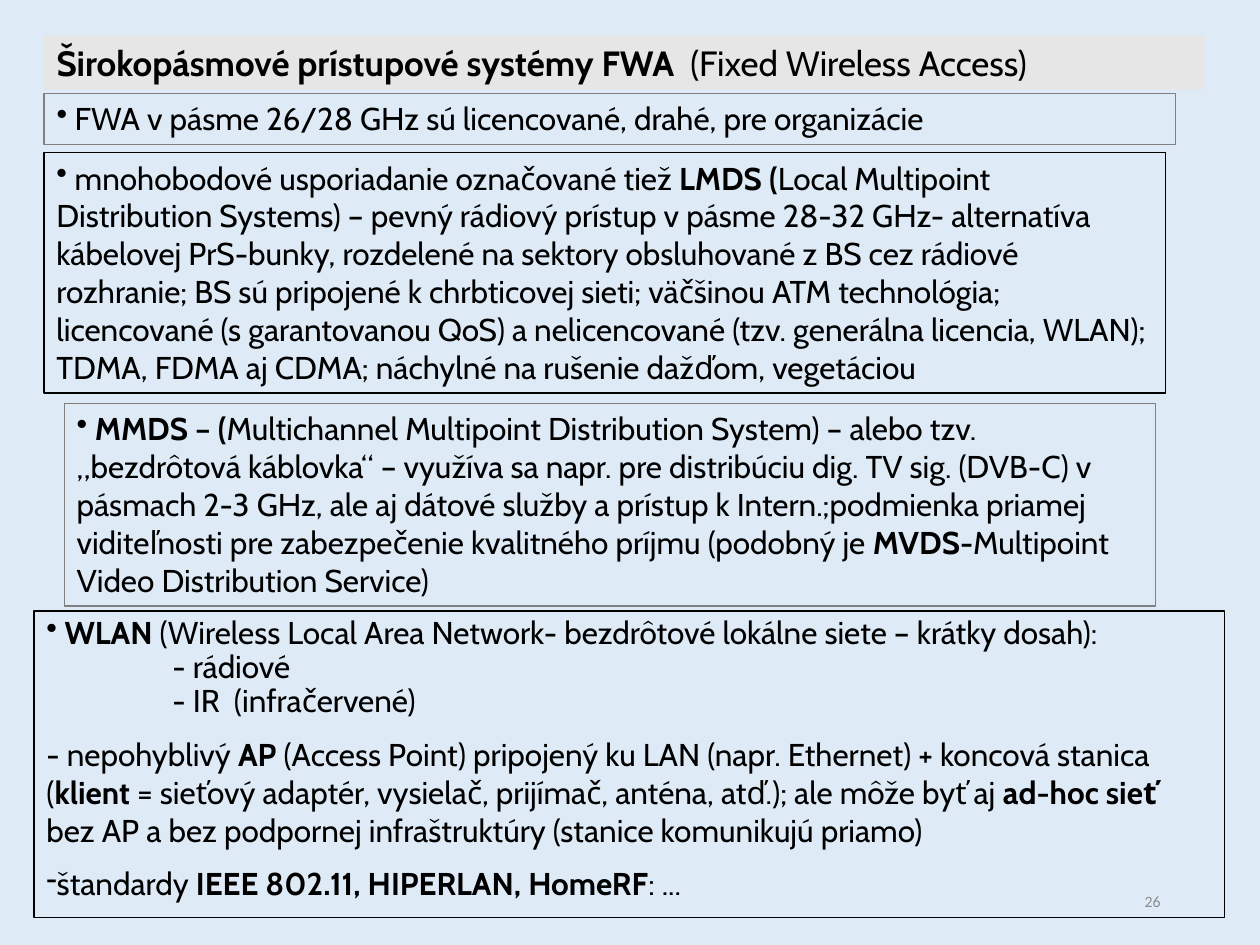
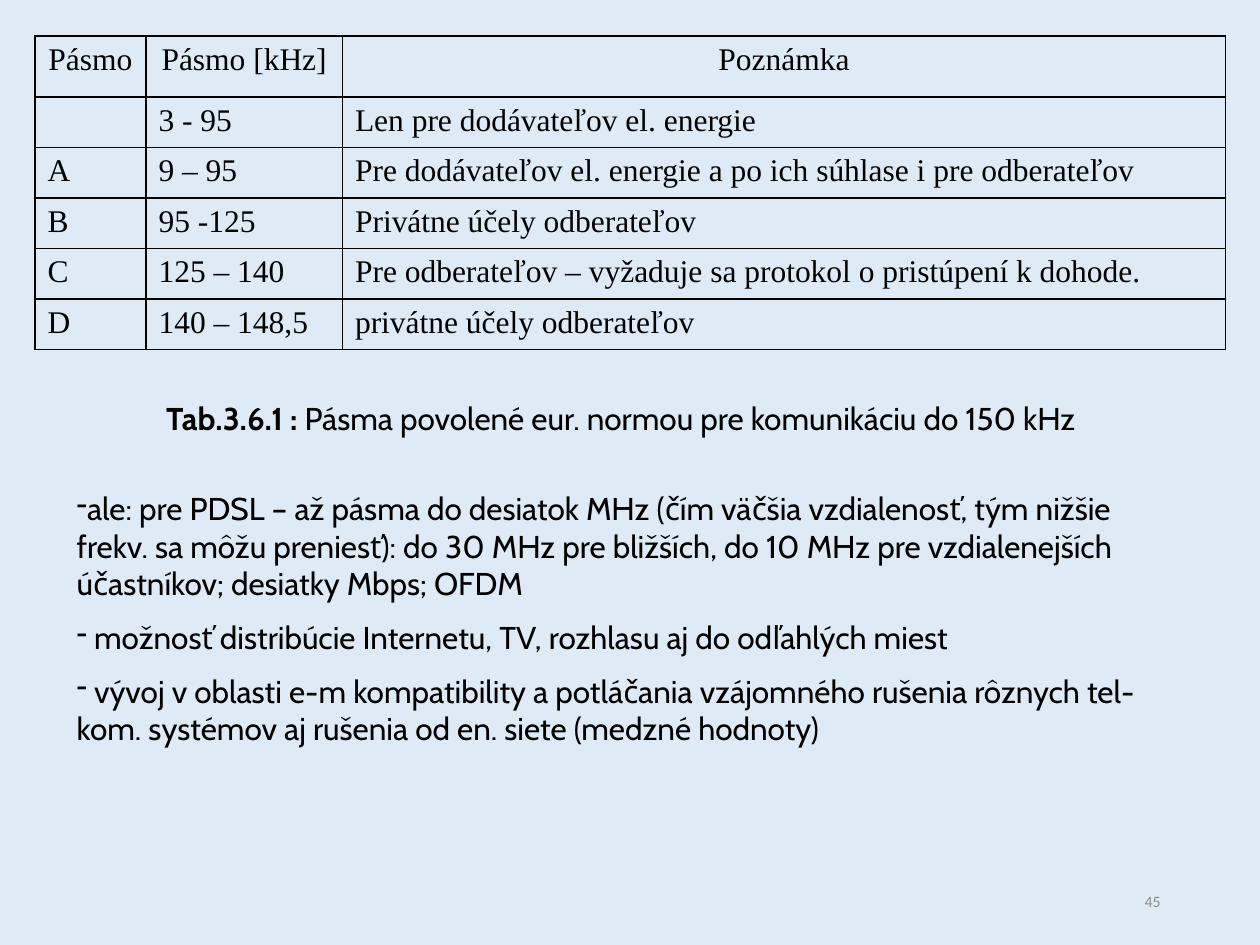
from dataclasses import dataclass

from lxml import etree
from pptx import Presentation
from pptx.dml.color import RGBColor
from pptx.enum.shapes import MSO_SHAPE
from pptx.enum.text import MSO_ANCHOR, PP_ALIGN
from pptx.oxml.ns import qn
from pptx.util import Pt

RECTANGLE = MSO_SHAPE.RECTANGLE
TOP, MIDDLE = MSO_ANCHOR.TOP, MSO_ANCHOR.MIDDLE
LEFT, CENTER, RIGHT = PP_ALIGN.LEFT, PP_ALIGN.CENTER, PP_ALIGN.RIGHT

BACKGROUND = "DEEBF7"
TITLE_BAND = "E7E6E6"
BLACK = "000000"
GRAY = "808080"
NUMBER_GRAY = "8C8C8C"
BODY_FONT = "Cabin"
NUMBER_FONT = "Calibri"
TABLE_FONT = "Times New Roman"
BODY_SIZE = 18
PARAGRAPH_GAP = 9
NUMBER_BOX = (508.3, 500.4, 162, 28.8)


@dataclass
class Item:
    text: str
    bullet: str = ""
    gap: float = PARAGRAPH_GAP
    margin: float = 0
    indent: float = 0
    line_spacing: float = 1.0


def color(hex_string):
    return RGBColor.from_string(hex_string)


def points(box):
    return [Pt(value) for value in box]


def write_runs(paragraph, text, font=BODY_FONT, size=BODY_SIZE, ink=BLACK):
    for index, part in enumerate(text.split("**")):
        if part:
            run = paragraph.add_run()
            run.text = part
            run.font.name = font
            run.font.size = Pt(size)
            run.font.bold = index % 2 == 1
            run.font.color.rgb = color(ink)


def write_items(text_frame, items, size=BODY_SIZE):
    text_frame.word_wrap = True
    text_frame.vertical_anchor = TOP
    for index, item in enumerate(items):
        paragraph = text_frame.add_paragraph() if index else text_frame.paragraphs[0]
        paragraph.alignment = LEFT
        paragraph.line_spacing = item.line_spacing
        paragraph.space_before = Pt(item.gap if index else 0)
        properties = paragraph._p.get_or_add_pPr()
        properties.set("marL", str(Pt(item.margin)))
        properties.set("indent", str(Pt(item.indent)))
        if item.bullet:
            etree.SubElement(properties, qn("a:buChar"), char=item.bullet)
        write_runs(paragraph, item.text, size=size)


def add_panel(slide, box, items, line=None, fill=None, size=BODY_SIZE):
    shape = slide.shapes.add_shape(RECTANGLE, *points(box))
    shape.shadow.inherit = False
    if fill:
        shape.fill.solid()
        shape.fill.fore_color.rgb = color(fill)
    else:
        shape.fill.background()
    if line:
        shape.line.color.rgb = color(line)
        shape.line.width = Pt(0.75)
    else:
        shape.line.fill.background()
    write_items(shape.text_frame, items, size)


def add_text(slide, box, items):
    write_items(slide.shapes.add_textbox(*points(box)).text_frame, items)


def add_page_number(slide, number):
    text_frame = slide.shapes.add_textbox(*points(NUMBER_BOX)).text_frame
    text_frame.word_wrap = True
    text_frame.vertical_anchor = MIDDLE
    paragraph = text_frame.paragraphs[0]
    paragraph.alignment = RIGHT
    write_runs(paragraph, str(number), NUMBER_FONT, 9, NUMBER_GRAY)


def set_cell_borders(cell):
    properties = cell._tc.get_or_add_tcPr()
    for index, side in enumerate(("lnL", "lnR", "lnT", "lnB")):
        border = etree.Element(qn(f"a:{side}"), w=str(Pt(1)))
        fill = etree.SubElement(border, qn("a:solidFill"))
        etree.SubElement(fill, qn("a:srgbClr"), val=BLACK)
        properties.insert(index, border)


def add_band_table(slide, box, rows, column_widths, header_height):
    frame = slide.shapes.add_table(len(rows), len(column_widths), *points(box))
    table = frame.table
    table.first_row = False
    table.horz_banding = False
    for column, width in zip(table.columns, column_widths):
        column.width = Pt(width)
    row_height = (box[3] - header_height) / (len(rows) - 1)
    for row_index, values in enumerate(rows):
        table.rows[row_index].height = Pt(row_height if row_index else header_height)
        for column_index, value in enumerate(values):
            cell = table.cell(row_index, column_index)
            cell.fill.background()
            set_cell_borders(cell)
            paragraph = cell.text_frame.paragraphs[0]
            paragraph.alignment = LEFT if row_index else CENTER
            write_runs(paragraph, value, TABLE_FONT)


def new_slide(presentation, number):
    slide = presentation.slides.add_slide(presentation.slide_layouts[6])
    slide.background.fill.solid()
    slide.background.fill.fore_color.rgb = color(BACKGROUND)
    add_page_number(slide, number)
    return slide


def build_access_systems(presentation):
    slide = new_slide(presentation, 26)
    add_panel(slide, (25.2, 20.2, 663.1, 31), [
        Item("**Širokopásmové prístupové systémy FWA  **(Fixed Wireless Access)"),
    ], fill=TITLE_BAND, size=20)
    add_panel(slide, (25.2, 53.3, 646.6, 29.5), [
        Item(" FWA v pásme 26/28 GHz sú licencované, drahé, pre organizácie", "•"),
    ], line=GRAY)
    add_panel(slide, (25.2, 87.1, 640.8, 137.5), [
        Item(" mnohobodové usporiadanie označované tiež **LMDS (**Local Multipoint "
             "Distribution Systems) – pevný rádiový prístup v pásme 28-32 GHz- alternatíva "
             "kábelovej PrS-bunky, rozdelené na sektory obsluhované z BS cez rádiové "
             "rozhranie; BS sú pripojené k chrbticovej sieti; väčšinou ATM technológia; "
             "licencované (s garantovanou QoS) a nelicencované (tzv. generálna licencia, "
             "WLAN); TDMA, FDMA aj CDMA; náchylné na rušenie dažďom, vegetáciou", "•"),
    ], line=BLACK)
    add_panel(slide, (36.7, 230.4, 623.5, 115.9), [
        Item("** MMDS – (**Multichannel Multipoint Distribution System) – alebo tzv. "
             "„bezdrôtová káblovka“ – využíva sa napr. pre distribúciu dig. TV sig. (DVB-C) "
             "v pásmach 2-3 GHz, ale aj dátové služby a prístup k Intern.;podmienka priamej "
             "viditeľnosti pre zabezpečenie kvalitného príjmu (podobný je **MVDS-**Multipoint "
             "Video Distribution Service)", "•"),
    ], line=GRAY)
    nested = {"gap": 0, "margin": 90, "indent": -18, "line_spacing": 0.9}
    add_panel(slide, (19.4, 349.2, 680.4, 175), [
        Item("** WLAN** (Wireless Local Area Network- bezdrôtové lokálne siete – "
             "krátky dosah):", "•", line_spacing=0.9),
        Item("- rádiové", **nested),
        Item("- IR  (infračervené)", **nested),
        Item("- nepohyblivý **AP** (Access Point) pripojený ku LAN (napr. Ethernet) + "
             "koncová stanica (**klient** = sieťový adaptér, vysielač, prijímač, anténa, "
             "atď.); ale môže byť aj **ad-hoc sieť** bez AP a bez podpornej infraštruktúry "
             "(stanice komunikujú priamo)"),
        Item("štandardy **IEEE 802.11, HIPERLAN, HomeRF**: ...", "-"),
    ], line=BLACK)


def build_frequency_bands(presentation):
    slide = new_slide(presentation, 45)
    rows = [
        ("Pásmo", "Pásmo [kHz]", "Poznámka"),
        ("", "3 - 95", "Len pre dodávateľov el. energie"),
        ("A", "9 – 95", "Pre dodávateľov el. energie a po ich súhlase i pre odberateľov"),
        ("B", "95 -125", "Privátne účely odberateľov"),
        ("C", "125 – 140", "Pre odberateľov – vyžaduje sa protokol o pristúpení k dohode."),
        ("D", "140 – 148,5", "privátne účely odberateľov"),
    ]
    add_band_table(slide, (20, 20.5, 680.4, 179), rows, (63.4, 112.3, 504.7), 35)
    add_text(slide, (87.8, 224.6, 583.9, 28.8), [
        Item("**Tab.3.6.1 : **Pásma povolené eur. normou pre komunikáciu do 150 kHz"),
    ])
    add_text(slide, (36.7, 275.8, 646.6, 159.8), [
        Item("ale: pre PDSL – až pásma do desiatok MHz (čím väčšia vzdialenosť, tým nižšie "
             "frekv. sa môžu preniesť): do 30 MHz pre bližších, do 10 MHz pre vzdialenejších "
             "účastníkov; desiatky Mbps; OFDM", "-"),
        Item(" možnosť distribúcie Internetu, TV, rozhlasu aj do odľahlých miest", "-"),
        Item(" vývoj v oblasti e-m kompatibility a potláčania vzájomného rušenia rôznych "
             "tel-kom. systémov aj rušenia od en. siete (medzné hodnoty)", "-"),
    ])


def main():
    presentation = Presentation()
    presentation.slide_width = Pt(720)
    presentation.slide_height = Pt(540)
    build_access_systems(presentation)
    build_frequency_bands(presentation)
    presentation.save("out.pptx")


if __name__ == "__main__":
    main()
